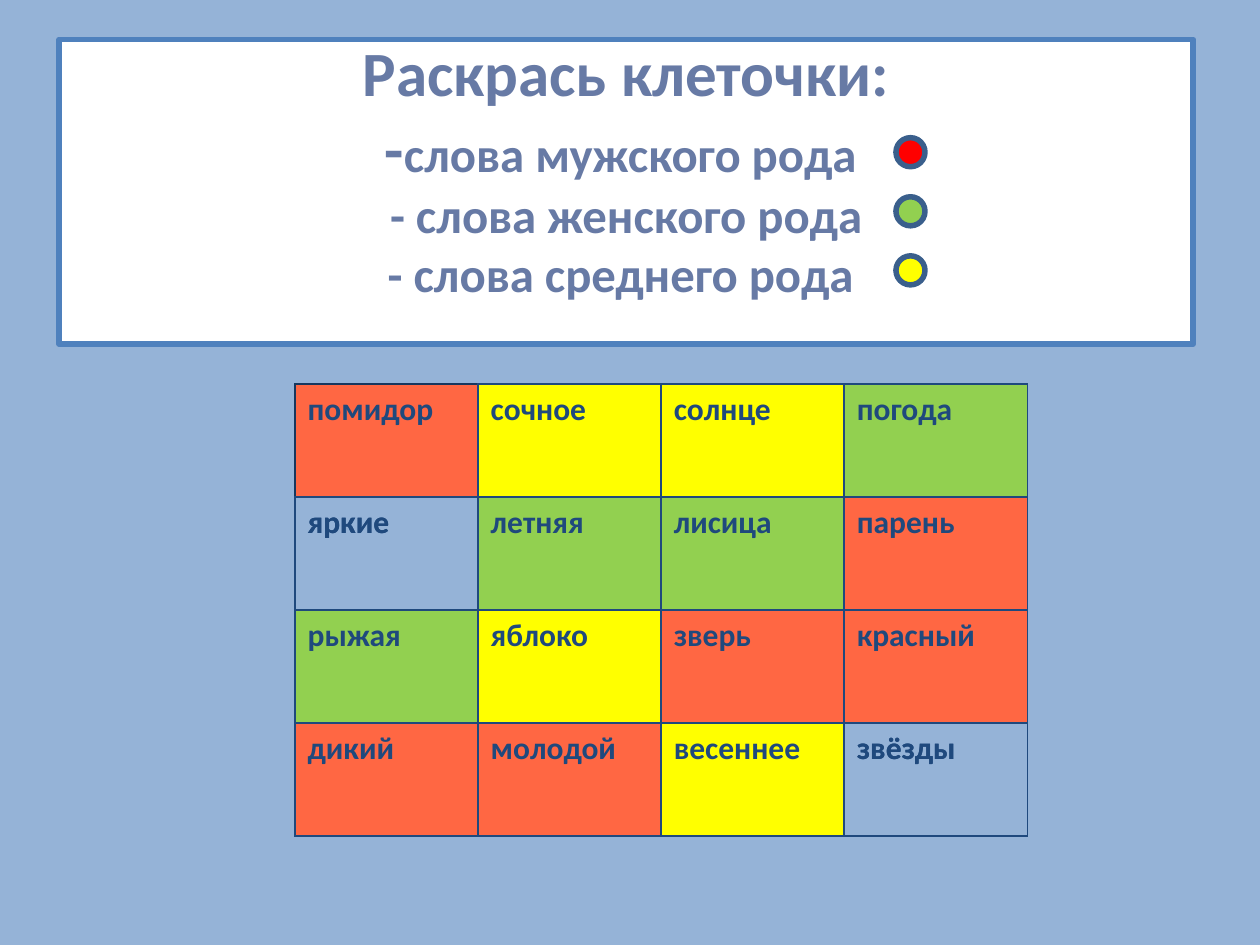
from lxml import etree
from pptx import Presentation
from pptx.dml.color import RGBColor
from pptx.enum.shapes import MSO_SHAPE
from pptx.enum.text import MSO_ANCHOR, MSO_AUTO_SIZE, PP_ALIGN
from pptx.oxml.ns import qn
from pptx.util import Pt

OVAL = MSO_SHAPE.OVAL
MIDDLE = MSO_ANCHOR.MIDDLE
NO_FIT = MSO_AUTO_SIZE.NONE
CENTER = PP_ALIGN.CENTER

COLORS = {
    "background": "95B3D7", "panel": "FFFFFF", "panel_line": "4F81BD",
    "heading": "677AA5", "word": "1F497D", "first_border": "17375E",
    "dot_line": "3A5F8C", "red_dot": "FF0000",
    "red": "FF6743", "green": "92D050", "yellow": "FFFF00",
}
WORDS = [
    [("помидор", "red"), ("сочное", "yellow"), ("солнце", "yellow"), ("погода", "green")],
    [("яркие", None), ("летняя", "green"), ("лисица", "green"), ("парень", "red")],
    [("рыжая", "green"), ("яблоко", "yellow"), ("зверь", "red"), ("красный", "red")],
    [("дикий", "red"), ("молодой", "red"), ("весеннее", "yellow"), ("звёзды", None)],
]
COLUMN_WIDTH, ROW_HEIGHT = 104.6, 64.6


def rgb(name):
    return RGBColor.from_string(COLORS[name])


def format_run(run, size, color):
    for attribute, value in {"name": "Calibri", "size": Pt(size), "bold": True}.items():
        setattr(run.font, attribute, value)
    run.font.color.rgb = rgb(color)


prs = Presentation()
prs.slide_width, prs.slide_height = Pt(720), Pt(540)
slide = prs.slides.add_slide(prs.slide_layouts[5])
slide.background.fill.solid()
slide.background.fill.fore_color.rgb = rgb("background")

# Task panel
task = slide.shapes.title
task.left, task.top, task.width, task.height = Pt(33.8), Pt(22.5), Pt(648), Pt(174.2)
task.fill.solid()
task.fill.fore_color.rgb = rgb("panel")
task.line.color.rgb = rgb("panel_line")
task.line.width = Pt(3.15)
frame_format = {"word_wrap": True, "auto_size": NO_FIT, "vertical_anchor": MIDDLE,
                "margin_top": Pt(0), "margin_bottom": Pt(27)}
for attribute, value in frame_format.items():
    setattr(task.text_frame, attribute, value)

instructions = task.text_frame.paragraphs[0]
instructions.alignment = CENTER
task_lines = [
    [("Раскрась клеточки:", 36)],
    [("-", 36), ("слова мужского рода ", 27.9)],
    [("- слова женского рода", 27.9)],
    [("- слова среднего рода ", 27.9)],
]
for number, line in enumerate(task_lines):
    if number:
        instructions.add_line_break()
    for text, size in line:
        run = instructions.add_run()
        run.text = text
        format_run(run, size, "heading")

# Plain word grid, then the coloured one, with the gender key between them
for coloured in (False, True):
    grid = slide.shapes.add_table(4, 4, Pt(168.6), Pt(219.5),
                                  Pt(4 * COLUMN_WIDTH), Pt(4 * ROW_HEIGHT)).table
    grid.first_row = grid.horz_banding = False
    for column in grid.columns:
        column.width = Pt(COLUMN_WIDTH)
    for r, row in enumerate(WORDS):
        grid.rows[r].height = Pt(ROW_HEIGHT)
        for c, (word, color) in enumerate(row):
            cell = grid.cell(r, c)
            cell.text = word
            format_run(cell.text_frame.paragraphs[0].runs[0], 18, "word")

            # Borders come before the fill in the cell properties
            border = "first_border" if r == c == 0 else "word"
            properties = cell._tc.get_or_add_tcPr()
            for side in ("a:lnL", "a:lnR", "a:lnT", "a:lnB"):
                edge = etree.SubElement(properties, qn(side), w=str(Pt(1)))
                paint = etree.SubElement(edge, qn("a:solidFill"))
                etree.SubElement(paint, qn("a:srgbClr"), val=COLORS[border])

            if coloured and color:
                cell.fill.solid()
                cell.fill.fore_color.rgb = rgb(color)
            else:
                cell.fill.background()

    # Gender key
    if not coloured:
        for number, color in enumerate(("red_dot", "green", "yellow")):
            dot = slide.shapes.add_shape(OVAL, Pt(512), Pt(78.7 + 33.75 * number),
                                         Pt(16.6), Pt(16.6))
            dot.shadow.inherit = False
            dot.fill.solid()
            dot.fill.fore_color.rgb = rgb(color)
            dot.line.color.rgb = rgb("dot_line")
            dot.line.width = Pt(3.15)

prs.save("out.pptx")
